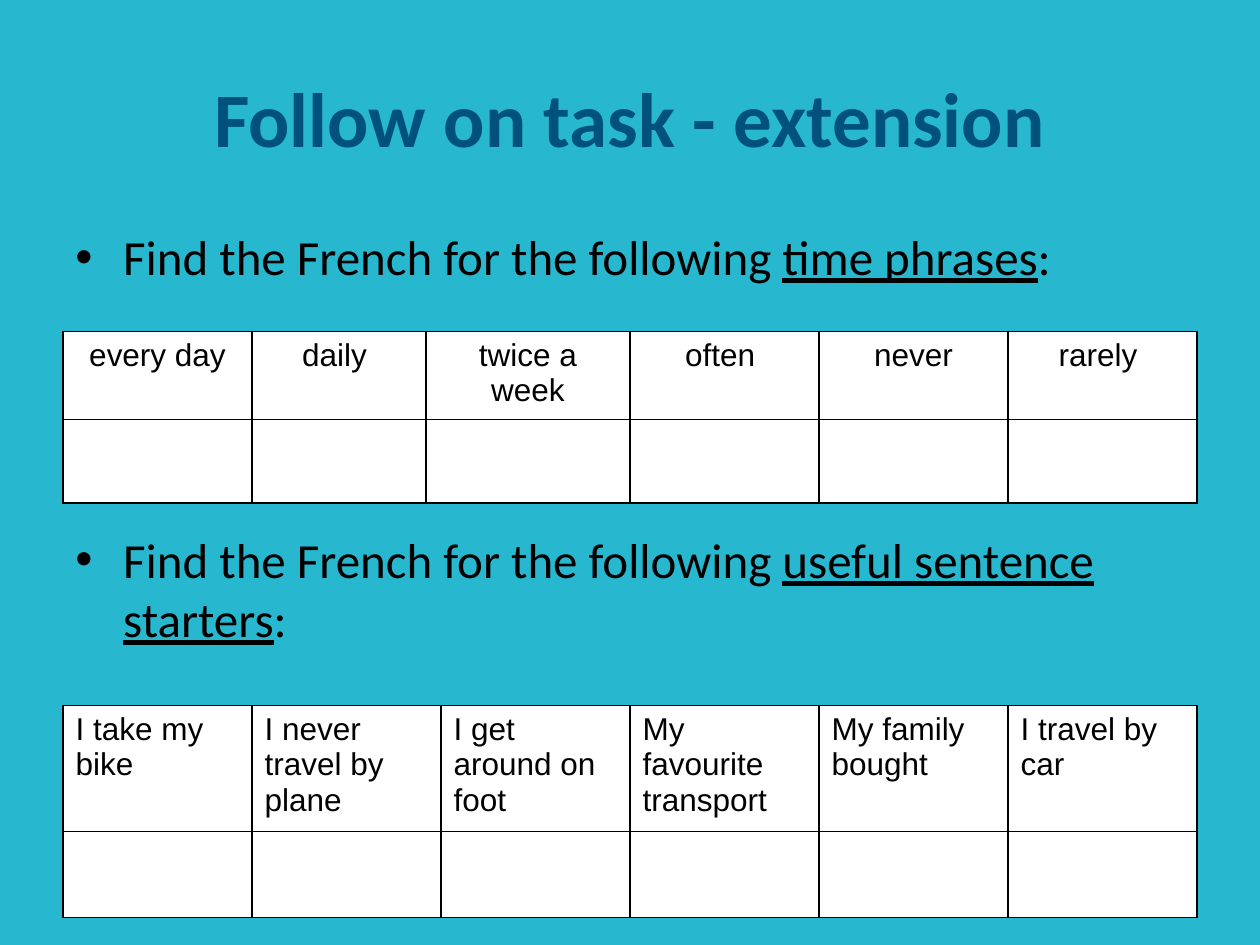
import pptx
import pptx.util
import pptx.dml.color
import pptx.enum.text
import pptx.oxml
import pptx.oxml.ns
from lxml import etree

Inches, Pt = pptx.util.Inches, pptx.util.Pt
RGBColor = pptx.dml.color.RGBColor
PP_ALIGN = pptx.enum.text.PP_ALIGN
ANCHOR = pptx.enum.text.MSO_ANCHOR
qn = pptx.oxml.ns.qn

TEAL = RGBColor(0x27, 0xB8, 0xCF)
NAVY = RGBColor(0x00, 0x52, 0x7D)
BLACK = RGBColor(0, 0, 0)
WHITE = RGBColor(255, 255, 255)

TITLE = "Follow on task - extension"
LEAD = "Find the French for the following "
# Underlined target, points of space before it
TASKS = [("time phrases", 0), ("useful sentence starters", 139.5)]
GRIDS = [
    dict(phrases=["every day", "daily ", "twice a week", "often ", "never", "rarely "],
         top=2.63, widths=[1.5, 1.38, 1.62, 1.5, 1.5, 1.5],
         heights=[0.66, 0.66], align=PP_ALIGN.CENTER),
    dict(phrases=["I take my bike", "I never travel by plane", "I get around on foot",
                  "My favourite transport", "My family bought", "I travel by car"],
         top=5.6, widths=[1.5] * 6, heights=[0.94, 0.68], align=PP_ALIGN.LEFT),
]
LEFT, WIDTH = 0.5, 9


def style(font, name, size, color):
    font.name, font.size = name, Pt(size)
    font.color.rgb = color


def add_bullet(paragraph, indent):
    properties = paragraph._p.get_or_add_pPr()
    properties.set("marL", str(Inches(indent)))
    properties.set("indent", str(-Inches(indent)))
    etree.SubElement(properties, qn("a:buFont"), typeface="Arial")
    etree.SubElement(properties, qn("a:buChar"), char="•")


def add_borders(cell):
    """Black 1 pt lines on all four sides; they must precede the cell fill."""
    properties = cell._tc.get_or_add_tcPr()
    for position, side in enumerate(("a:lnL", "a:lnR", "a:lnT", "a:lnB")):
        line = etree.Element(qn(side), w=str(Pt(1)))
        fill = etree.SubElement(line, qn("a:solidFill"))
        etree.SubElement(fill, qn("a:srgbClr"), val=str(BLACK))
        properties.insert(position, line)


def add_grid(slide, phrases, top, widths, heights, align):
    """A row of phrases above a row of blank answer cells."""
    table = slide.shapes.add_table(
        len(heights), len(widths), Inches(LEFT), Inches(top),
        Inches(sum(widths)), Inches(sum(heights))).table
    for column, width in zip(table.columns, widths):
        column.width = Inches(width)
    for row, height in zip(table.rows, heights):
        row.height = Inches(height)
    for cell in table.iter_cells():
        cell.fill.solid()
        cell.fill.fore_color.rgb = WHITE
        add_borders(cell)
    for column, phrase in enumerate(phrases):
        cell = table.cell(0, column)
        cell.text_frame.text = phrase
        paragraph = cell.text_frame.paragraphs[0]
        paragraph.alignment = align
        style(paragraph.runs[0].font, "Arial", 18, BLACK)
        paragraph.runs[0].font.bold = False


def add_tasks(slide):
    frame = slide.shapes.add_textbox(
        Inches(LEFT), Inches(1.75), Inches(WIDTH), Inches(4.95)).text_frame
    frame.word_wrap = True
    for number, (target, space) in enumerate(TASKS):
        paragraph = frame.add_paragraph() if number else frame.paragraphs[0]
        if space:
            paragraph.space_before = Pt(space)
        add_bullet(paragraph, 0.38)
        for words in (LEAD, target, ":"):
            run = paragraph.add_run()
            run.text = words
            style(run.font, "Calibri", 28, BLACK)
            run.font.underline = words == target


def main():
    deck = pptx.Presentation()
    deck.slide_width, deck.slide_height = Inches(10), Inches(7.5)
    slide = deck.slides.add_slide(deck.slide_layouts[5])
    slide.background.fill.solid()
    slide.background.fill.fore_color.rgb = TEAL

    title = slide.shapes.title
    title.left, title.top = Inches(LEFT), Inches(0.3)
    title.width, title.height = Inches(WIDTH), Inches(1.25)
    title.text_frame.text = TITLE
    title.text_frame.vertical_anchor = ANCHOR.MIDDLE
    heading = title.text_frame.paragraphs[0]
    heading.alignment = PP_ALIGN.CENTER
    style(heading.runs[0].font, "Calibri", 44, NAVY)
    heading.runs[0].font.bold = True

    add_tasks(slide)
    for grid in GRIDS:
        add_grid(slide, **grid)
    deck.save("out.pptx")


if __name__ == "__main__":
    main()
